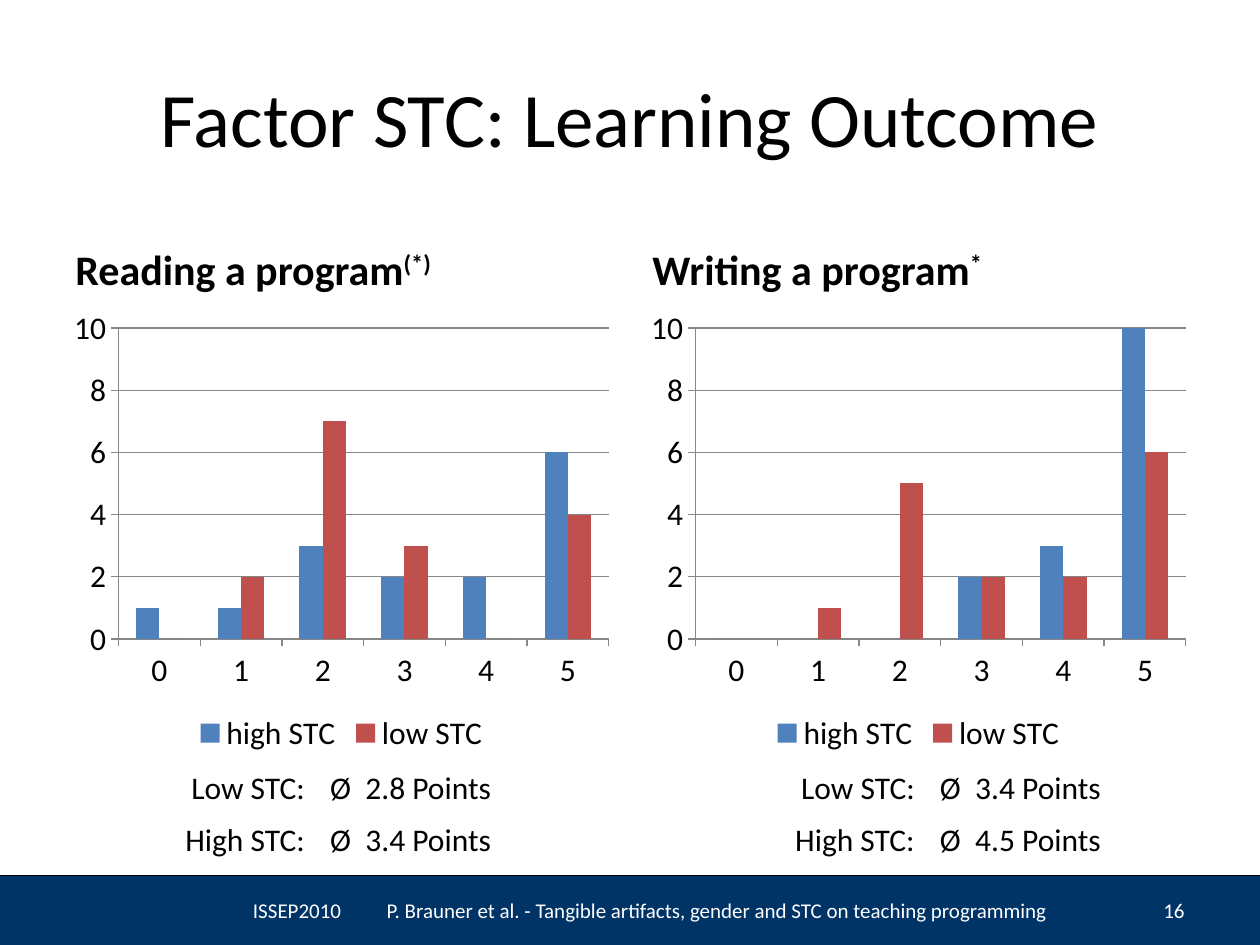
"""Build the slide on learning outcome by STC group."""
from lxml import etree
from pptx import Presentation
from pptx.chart.data import CategoryChartData
from pptx.dml.color import RGBColor
from pptx.enum.chart import XL_CHART_TYPE, XL_LEGEND_POSITION, XL_TICK_MARK
from pptx.enum.shapes import MSO_SHAPE
from pptx.enum.text import MSO_ANCHOR, PP_ALIGN
from pptx.oxml.ns import qn
from pptx.util import Inches, Pt

COLUMN = XL_CHART_TYPE.COLUMN_CLUSTERED
BOTTOM = XL_LEGEND_POSITION.BOTTOM
OUT = XL_TICK_MARK.OUTSIDE
RECT = MSO_SHAPE.RECTANGLE
MID, LOW = MSO_ANCHOR.MIDDLE, MSO_ANCHOR.BOTTOM
LEFT, CENTER, RIGHT = PP_ALIGN.LEFT, PP_ALIGN.CENTER, PP_ALIGN.RIGHT

FONT = "Calibri"
COLORS = {"text": "000000", "bar": "003366", "light": "FFFFFF",
          "grid": "868686", "high": "4F81BD", "low": "C0504D"}

TITLE = "Factor STC: Learning Outcome"
CATS = ["0", "1", "2", "3", "4", "5"]
PANELS = [
    {"head": "Reading a program", "mark": "(*)", "left": 0.5, "table": 0.86,
     "high": [1, 1, 3, 2, 2, 6], "low": [0, 2, 7, 3, 0, 4],
     "means": [("Low STC:", "Ø\t2.8 Points"), ("High STC:", "Ø\t3.4 Points")]},
    {"head": "Writing a program", "mark": "*", "left": 5.08, "table": 5.7,
     "high": [0, 0, 0, 2, 3, 10], "low": [0, 1, 5, 2, 2, 6],
     "means": [("Low STC:", "Ø\t3.4 Points"), ("High STC:", "Ø\t4.5 Points")]},
]
FOOTER = [
    ("ISSEP2010", 1.91, 1.06, LEFT),
    ("P. Brauner et al. - Tangible artifacts, gender and STC on teaching programming",
     2.97, 5.47, LEFT),
    ("16", 8.44, 1.06, RIGHT),
]
WIDTH = 4.42
COLS = [1.66, 1.69]
ROW = 0.41


def rgb(name):
    return RGBColor.from_string(COLORS[name])


def style(font, size, color="text", bold=False):
    font.name, font.size, font.bold = FONT, Pt(size), bold
    font.color.rgb = rgb(color)


def add_run(para, text, size, color="text", bold=False):
    run = para.add_run()
    run.text = text
    style(run.font, size, color, bold)
    return run


def add_box(slide, at, anchor, align=LEFT):
    frame = slide.shapes.add_textbox(*map(Inches, at)).text_frame
    frame.word_wrap = True
    frame.vertical_anchor = anchor
    para = frame.paragraphs[0]
    para.alignment = align
    return para


def add_chart(slide, panel):
    data = CategoryChartData()
    data.categories = CATS
    for key in ("high", "low"):
        data.add_series(f"{key} STC", panel[key])
    at = map(Inches, (panel["left"], 2.38, WIDTH, 3.64))
    chart = slide.shapes.add_chart(COLUMN, *at, data).chart
    style(chart.font, 18)
    chart.has_title = False
    chart.has_legend = True
    chart.legend.position = BOTTOM
    chart.legend.include_in_layout = False
    plot = chart.plots[0]
    plot.vary_by_categories = False
    plot.gap_width, plot.overlap = 150, 0
    for series, key in zip(plot.series, ("high", "low")):
        series.format.fill.solid()
        series.format.fill.fore_color.rgb = rgb(key)
    scale = chart.value_axis
    scale.minimum_scale, scale.maximum_scale, scale.major_unit = 0, 10, 2
    scale.has_major_gridlines = True
    for part in (scale, chart.category_axis, scale.major_gridlines):
        part.format.line.color.rgb = rgb("grid")
        part.format.line.width = Pt(0.75)
    for axis in (scale, chart.category_axis):
        axis.major_tick_mark = OUT


def add_means(slide, panel):
    rows = panel["means"]
    at = map(Inches, (panel["table"], 6.06, sum(COLS), ROW * len(rows)))
    table = slide.shapes.add_table(len(rows), len(COLS), *at).table
    table.first_row = table.horz_banding = False
    for col, width in zip(table.columns, COLS):
        col.width = Inches(width)
    for i, row in enumerate(rows):
        table.rows[i].height = Inches(ROW)
        for j, text in enumerate(row):
            cell = table.cell(i, j)
            cell.fill.background()
            para = cell.text_frame.paragraphs[0]
            para.alignment = (RIGHT, LEFT)[j]
            if "\t" in text:
                tabs = etree.SubElement(para._p.get_or_add_pPr(), qn("a:tabLst"))
                etree.SubElement(tabs, qn("a:tab"), pos=str(Inches(0.28)), algn="l")
            add_run(para, text, 18)


def add_footer(slide):
    bar = slide.shapes.add_shape(RECT, *map(Inches, (-1.43, 6.95, 14.29, 0.78)))
    bar.shadow.inherit = False
    bar.fill.solid()
    bar.fill.fore_color.rgb = rgb("bar")
    bar.line.color.rgb = rgb("text")
    bar.line.width = Pt(0)
    for text, left, width, align in FOOTER:
        para = add_box(slide, (left, 7.02, width, 0.4), MID, align)
        add_run(para, text, 12, "light")


def main():
    deck = Presentation()
    deck.slide_width, deck.slide_height = Inches(10), Inches(7.5)
    slide = deck.slides.add_slide(deck.slide_layouts[6])
    add_footer(slide)
    add_run(add_box(slide, (0.5, 0.3, 9, 1.25), MID, CENTER), TITLE, 44)
    for panel in PANELS:
        para = add_box(slide, (panel["left"], 1.68, WIDTH, 0.7), LOW)
        add_run(para, panel["head"], 24, bold=True)
        mark = add_run(para, panel["mark"], 24, bold=True)
        mark._r.get_or_add_rPr().set("baseline", "30000")
        add_chart(slide, panel)
        add_means(slide, panel)
    deck.save("out.pptx")


if __name__ == "__main__":
    main()
